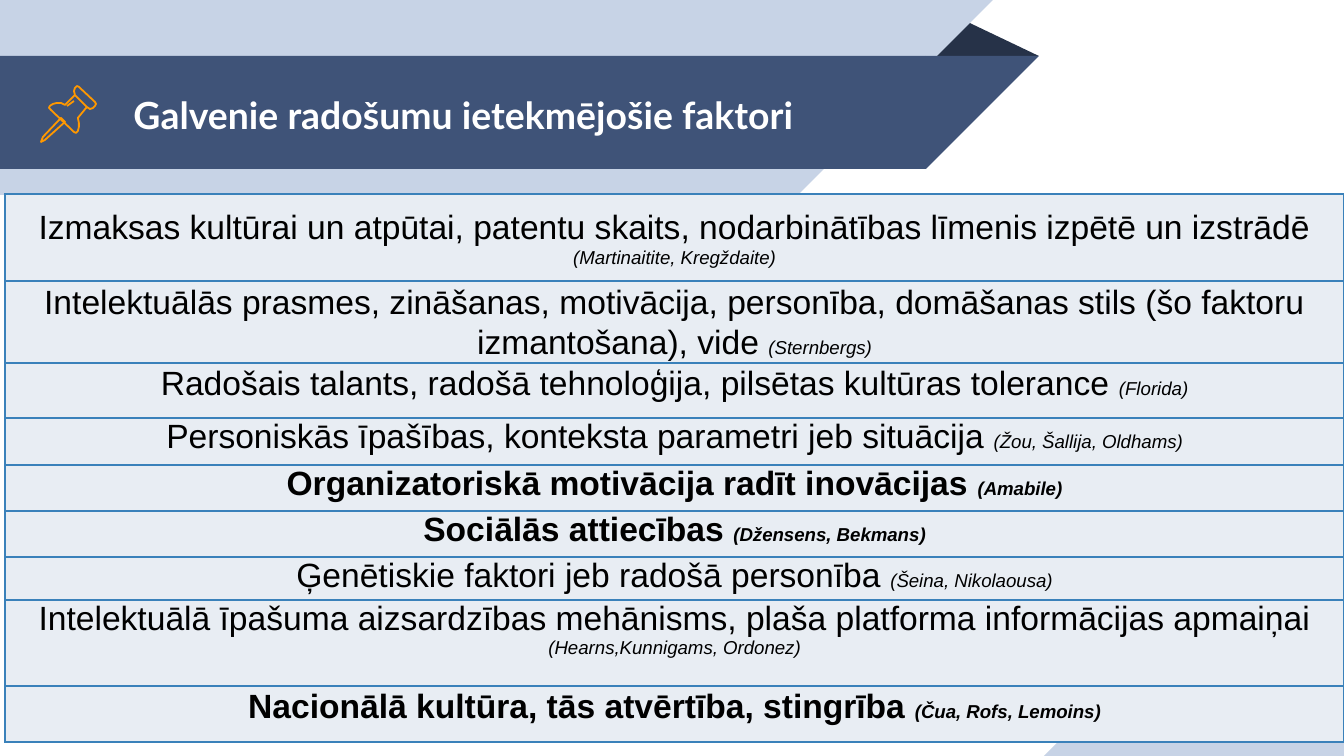
from lxml import etree
from pptx import Presentation
from pptx import util as u
from pptx.dml.color import RGBColor
from pptx.enum import shapes, text
from pptx.oxml.ns import qn

PX = 914400 / 134.4
PALE, NAVY, SHADE = "C7D3E6", "3F5378", "263248"
ORANGE, BORDER, CELL = "FF9800", "3A81BA", "E8EDF3"

# height, line spacing, bold, factor, authors
FACTORS = [
    (87, 1.07, False, "Izmaksas kultūrai un atpūtai, patentu skaits, nodarbinātības līmenis "
     "izpētē un izstrādē ", "(Martinaitite, Kregždaite)"),
    (82, 1.07, False, "Intelektuālās prasmes, zināšanas, motivācija, personība, domāšanas stils "
     "(šo faktoru izmantošana), vide ", "(Sternbergs)"),
    (55, 1.07, False, "Radošais talants, radošā tehnoloģija, pilsētas kultūras tolerance ",
     "(Florida)"),
    (47, 1, False, "Personiskās īpašības, konteksta parametri jeb situācija ",
     "(Žou, Šallija, Oldhams)"),
    (46, 1, True, "Organizatoriskā motivācija radīt inovācijas ", "(Amabile)"),
    (46, 1, True, "Sociālās attiecības ", "(Džensens, Bekmans)"),
    (43, 1, False, "Ģenētiskie faktori jeb radošā personība ", "(Šeina, Nikolaousa)"),
    (86, 1, False, "Intelektuālā īpašuma aizsardzības mehānisms, plaša platforma informācijas "
     "apmaiņai ", "(Hearns,Kunnigams, Ordonez)"),
    (56, 1.07, True, "Nacionālā kultūra, tās atvērtība, stingrība ", "(Čua, Rofs, Lemoins)"),
]

NEEDLE = [(20, 32), (2, 51), (0, 56), (4, 54), (24, 36)]
CAP = [(34, 9), (46, 21), (49, 23), (52, 22), (54, 20), (55, 18), (54, 16),
       (38, 1), (36, 0), (34, 2), (33, 5)]
BODY = [(34, 9), (24, 19), (20, 17), (16, 17), (12, 18), (9, 20), (8, 22), (10, 24),
        (33, 46), (35, 47), (37, 45), (38, 41), (38, 37), (37, 32), (46, 21)]


def px(*lengths):
    return [u.Emu(round(length * PX)) for length in lengths]


def color(value):
    return RGBColor.from_string(value)


def add_block(slide, preset, box, fill, flip=None):
    block = slide.shapes.add_shape(preset, *px(*box))
    block.shadow.inherit = False
    block.fill.solid()
    block.fill.fore_color.rgb = color(fill)
    block.line.fill.background()
    if flip:
        block.element.spPr.find(qn("a:xfrm")).set(flip, "1")
    return block


def add_band(slide, left, top, width, height, fill):
    """Bar whose right end is cut at 45 degrees; width is its top edge."""
    bar = width - height
    add_block(slide, shapes.MSO_SHAPE.RECTANGLE, (left, top, bar, height), fill)
    add_block(slide, shapes.MSO_SHAPE.RIGHT_TRIANGLE,
              (left + bar, top, height, height), fill, "flipV")


def add_header(slide, left, top):
    fold = add_block(slide, shapes.MSO_SHAPE.ISOSCELES_TRIANGLE,
                     (left + 925, top + 19, 114, 37), SHADE)
    fold.adjustments[0] = 0.32
    add_band(slide, left, top, 993, 195, PALE)
    add_band(slide, left, top + 56, 1039, 113, NAVY)


def add_corner(slide, left, top, width, height):
    add_block(slide, shapes.MSO_SHAPE.RECTANGLE,
              (left + height, top, width - height, height), PALE)
    add_block(slide, shapes.MSO_SHAPE.RIGHT_TRIANGLE, (left, top, height, height), PALE, "flipH")


def fill_title(slide, box):
    title = slide.shapes.title
    title.left, title.top, title.width, title.height = px(*box)
    slide.shapes.element.append(title.element)  # in front of the header
    frame = title.text_frame
    frame.auto_size = text.MSO_AUTO_SIZE.NONE
    frame.vertical_anchor = text.MSO_ANCHOR.MIDDLE
    frame.margin_left = frame.margin_right = u.Inches(0.1)
    frame.margin_top = frame.margin_bottom = u.Inches(0.1)
    heading = frame.paragraphs[0]
    heading.alignment = text.PP_ALIGN.LEFT
    add_run(heading, "Galvenie radošumu ietekmējošie faktori", 20, "FFFFFF", "Lato", bold=True)


def add_run(paragraph, words, size, ink, face, bold=False, italic=False):
    run = paragraph.add_run()
    run.text = words
    font = run.font
    font.size, font.name, font.bold, font.italic = u.Pt(size), face, bold, italic
    font.color.rgb = color(ink)


def add_pushpin(slide, left, top):
    outlines = []
    for points, closed in ((NEEDLE, True), (CAP, True), (BODY, False)):
        placed = [(left + x, top + y) for x, y in points]
        builder = slide.shapes.build_freeform(*placed[0], scale=PX)
        builder.add_line_segments(placed[1:], close=closed)
        part = builder.convert_to_shape()
        part.shadow.inherit = False
        part.fill.background()
        outlines.append(part)
    shine = slide.shapes.add_connector(shapes.MSO_CONNECTOR.STRAIGHT,
                                       *px(left + 26, top + 20, left + 33, top + 15))
    for part in outlines + [shine]:
        part.line.color.rgb = color(ORANGE)
        part.line.width = u.Pt(0.96)
    etree.SubElement(shine.element.spPr, qn("a:effectLst"))


def set_borders(cell):
    properties = cell._tc.get_or_add_tcPr()
    for index, side in enumerate(("lnL", "lnR", "lnT", "lnB")):
        edge = etree.Element(qn(f"a:{side}"), w=str(u.Pt(1)))
        paint = etree.SubElement(edge, qn("a:solidFill"))
        etree.SubElement(paint, qn("a:srgbClr"), val=BORDER)
        properties.insert(index, edge)


def add_factors(slide, left, top, width):
    height = sum(factor[0] for factor in FACTORS)
    table = slide.shapes.add_table(len(FACTORS), 1, *px(left, top, width, height)).table
    table.first_row = table.horz_banding = False
    for index, (row_height, spacing, bold, factor, authors) in enumerate(FACTORS):
        table.rows[index].height = px(row_height)[0]
        cell = table.cell(index, 0)
        cell.fill.solid()
        cell.fill.fore_color.rgb = color(CELL)
        set_borders(cell)
        first = index == 0
        cell.vertical_anchor = text.MSO_ANCHOR.MIDDLE if first else text.MSO_ANCHOR.TOP
        cell.margin_left = cell.margin_right = u.Inches(0.1 if first else 0.03)
        cell.margin_top = cell.margin_bottom = u.Inches(0.07 if first else 0)
        line = cell.text_frame.paragraphs[0]
        line.alignment = text.PP_ALIGN.CENTER
        line.line_spacing = float(spacing)
        add_run(line, factor, 18, "000000", "Arial", bold)
        add_run(line, authors, 10, "000000", "Arial", bold, italic=True)


def main():
    deck = Presentation()
    deck.slide_width, deck.slide_height = px(1344, 756)
    slide = deck.slides.add_slide(deck.slide_layouts[5])
    add_header(slide, 0, 0)
    add_corner(slide, 1044, 657, 300, 99)
    fill_title(slide, (120, 58, 808, 113))
    add_pushpin(slide, 41, 86)
    add_factors(slide, 5, 194, 1339)
    deck.save("out.pptx")


if __name__ == "__main__":
    main()
